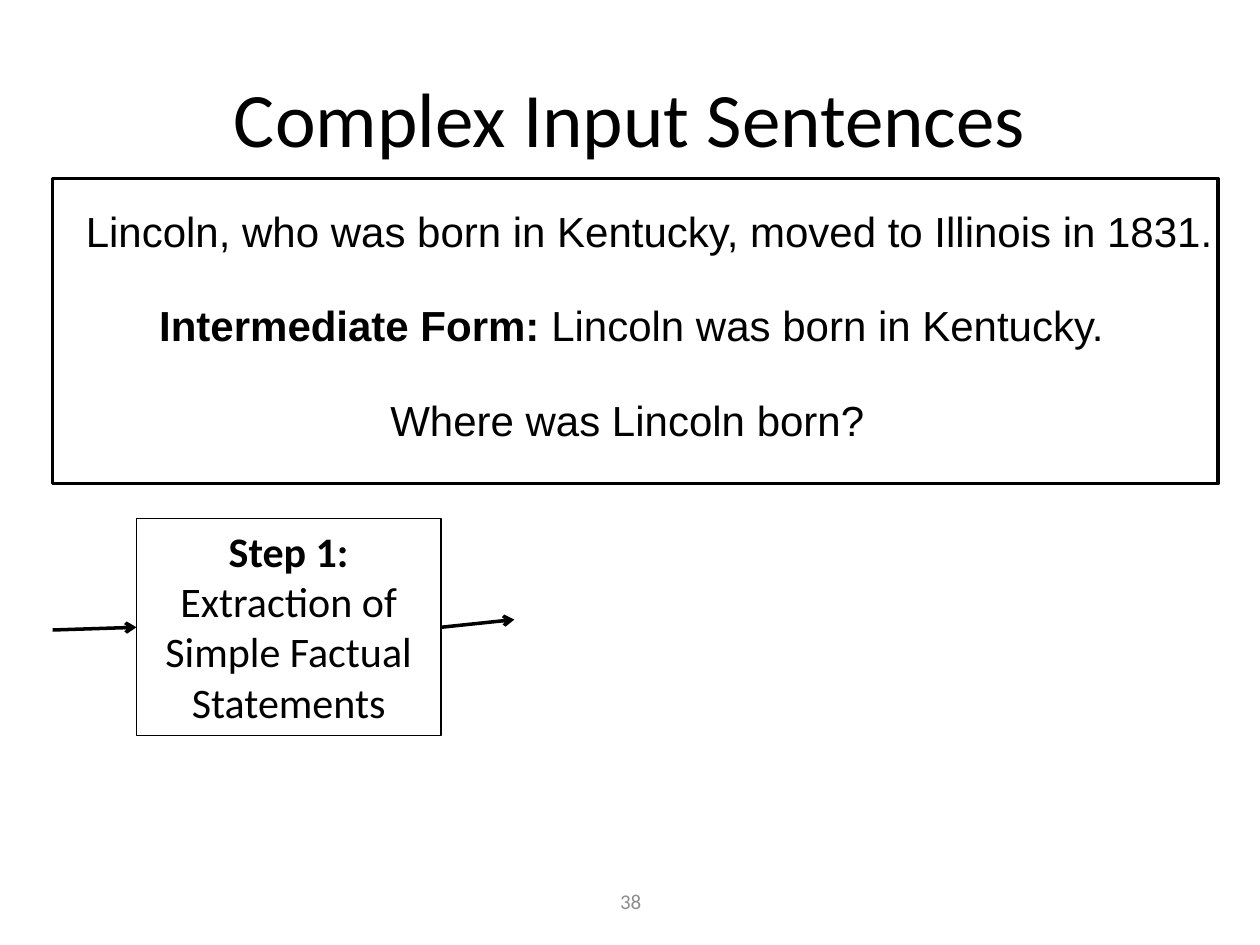
from lxml import etree
from pptx import Presentation
from pptx.dml.color import RGBColor
from pptx.enum.shapes import MSO_CONNECTOR, MSO_SHAPE
from pptx.enum.text import MSO_ANCHOR, MSO_AUTO_SIZE, PP_ALIGN
from pptx.oxml.ns import qn
from pptx.util import Cm, Pt

RECTANGLE = MSO_SHAPE.RECTANGLE
STRAIGHT = MSO_CONNECTOR.STRAIGHT
LEFT, CENTER = PP_ALIGN.LEFT, PP_ALIGN.CENTER
TOP, MIDDLE = MSO_ANCHOR.TOP, MSO_ANCHOR.MIDDLE
FIT_SHAPE, NO_FIT = MSO_AUTO_SIZE.SHAPE_TO_FIT_TEXT, MSO_AUTO_SIZE.NONE

COLORS = {"ink": "000000", "number": "8C8C8C"}


def set_color(color_format, name):
    color_format.rgb = RGBColor.from_string(COLORS[name])


def write_text(shape, paragraphs, font, size, align=LEFT, color="ink", **frame_format):
    """Fill a shape with paragraphs, each a list of (text, bold) runs."""
    frame = shape.text_frame
    for name, value in frame_format.items():
        setattr(frame, name, value)
    for index, runs in enumerate(paragraphs):
        paragraph = frame.add_paragraph() if index else frame.paragraphs[0]
        paragraph.alignment = align
        for text, bold in runs:
            run = paragraph.add_run()
            run.text = text
            for name, value in {"name": font, "size": Pt(size), "bold": bold}.items():
                setattr(run.font, name, value)
            set_color(run.font.color, color)


def place(shape, left, top, width, height):
    box = {"left": left, "top": top, "width": width, "height": height}
    for name, value in box.items():
        setattr(shape, name, Cm(value))


def add_text(slide, box, paragraphs, font, size, **text_format):
    shape = slide.shapes.add_textbox(*map(Cm, box))
    write_text(shape, paragraphs, font, size, **text_format)


def add_frame(slide, box, line_width):
    """Add an unfilled rectangle with a black outline."""
    shape = slide.shapes.add_shape(RECTANGLE, *map(Cm, box))
    shape.shadow.inherit = False
    shape.fill.background()
    set_color(shape.line.color, "ink")
    shape.line.width = Pt(line_width)
    return shape


def add_arrow(slide, start, end):
    arrow = slide.shapes.add_connector(STRAIGHT, *map(Cm, start + end))
    set_color(arrow.line.color, "ink")
    arrow.line.width = Pt(2)
    properties = arrow.element.spPr
    etree.SubElement(properties.find(qn("a:ln")), qn("a:tailEnd"), type="arrow")
    etree.SubElement(properties, qn("a:effectLst"))


def main():
    presentation = Presentation()
    presentation.slide_width, presentation.slide_height = Cm(25.4), Cm(19.05)
    slide = presentation.slides.add_slide(presentation.slide_layouts[5])

    title = slide.shapes.title
    place(title, 1.27, 0.76, 22.86, 3.18)
    write_text(title, [[("Complex Input Sentences", False)]], "Calibri", 44,
               align=CENTER, vertical_anchor=MIDDLE)
    add_text(slide, (8.69, 17.65, 8.05, 1.02), [[("38", False)]], "Calibri", 12,
             align=CENTER, color="number", vertical_anchor=MIDDLE, word_wrap=True)

    sentences = [
        (1.48, 23.7, [("Lincoln, who was born in Kentucky, moved to Illinois in 1831.", False)]),
        (2.96, 19.74, [("Intermediate Form: ", True), ("Lincoln was born in Kentucky.", False)]),
        (7.62, 10.19, [("Where was Lincoln born?", False)]),
    ]
    first_top, pitch = 4.02, 1.9
    for row, (left, width, runs) in enumerate(sentences):
        add_text(slide, (left, first_top + row * pitch, width, 1.28), [runs], "Arial", 24,
                 word_wrap=False, auto_size=FIT_SHAPE)
    add_frame(slide, (1.06, 3.6, 23.5, 6.15), 2)

    step_left, step_top, step_width, step_height = 2.75, 10.46, 6.14, 4.37
    step = add_frame(slide, (step_left, step_top, step_width, step_height), 0.75)
    write_text(step, [[("Step 1:", True)], [("Extraction of Simple Factual Statements", False)]],
               "Calibri", 24, align=CENTER, vertical_anchor=TOP, word_wrap=True,
               auto_size=NO_FIT)
    step_right, step_middle = step_left + step_width, step_top + step_height / 2
    add_arrow(slide, (1.06, 12.7), (step_left, step_middle))
    add_arrow(slide, (step_right, step_middle), (10.37, 12.49))

    presentation.save("out.pptx")


if __name__ == "__main__":
    main()
